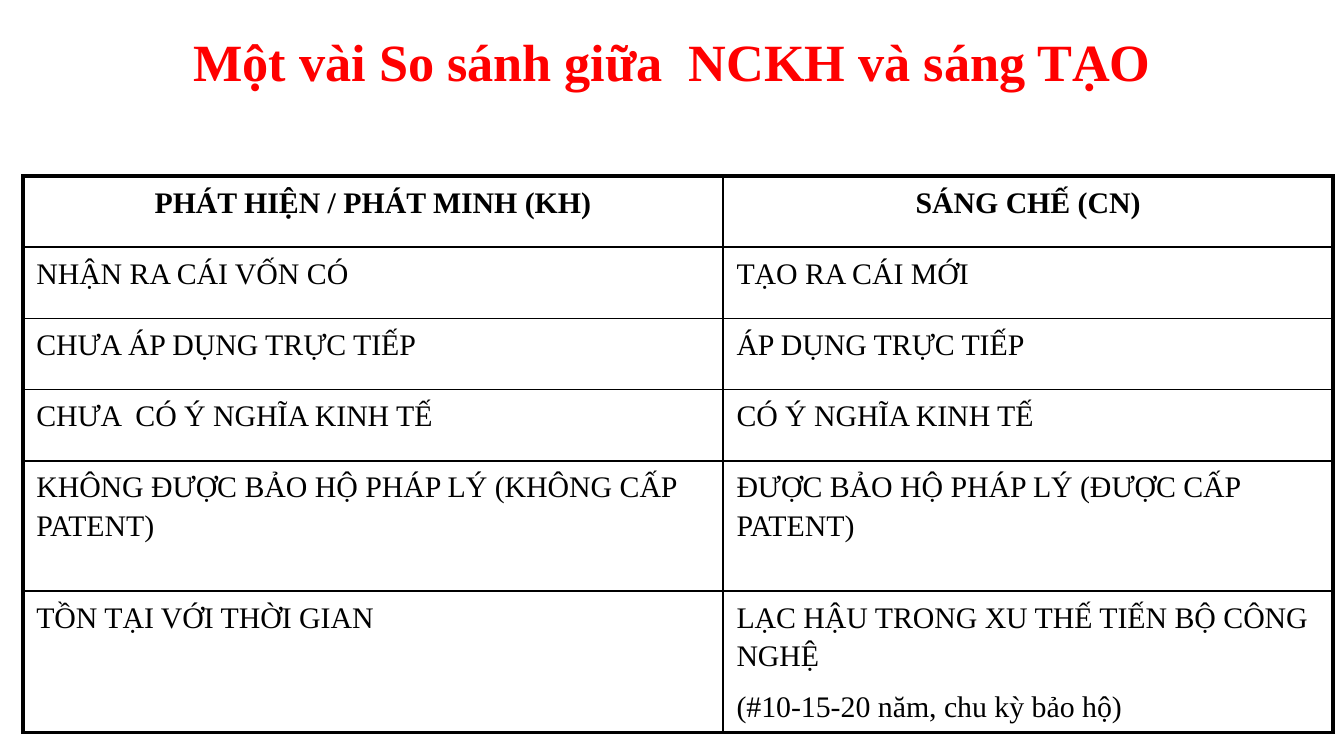
from dataclasses import dataclass

from lxml import etree
from pptx import Presentation, util as u
from pptx.dml.color import RGBColor
from pptx.enum import text
from pptx.oxml import ns

W = 10
H = W * 9 / 16
FONT = "Times New Roman"
COLORS = {"title": "FF0000", "ink": "000000", "paper": "FFFFFF"}
COLUMNS = (5.21, 4.54)
THIN, THICK = 1, 2.25


@dataclass(frozen=True)
class Row:
    discovery: str
    invention: str
    height: float = 0.53
    header: bool = False


ROWS = (
    Row("PHÁT HIỆN / PHÁT MINH (KH)", "SÁNG CHẾ (CN)", header=True),
    Row("NHẬN RA CÁI VỐN CÓ", "TẠO RA CÁI MỚI"),
    Row("CHƯA ÁP DỤNG TRỰC TIẾP", "ÁP DỤNG TRỰC TIẾP"),
    Row("CHƯA  CÓ Ý NGHĨA KINH TẾ", "CÓ Ý NGHĨA KINH TẾ"),
    Row("KHÔNG ĐƯỢC BẢO HỘ PHÁP LÝ (KHÔNG CẤP PATENT)",
        "ĐƯỢC BẢO HỘ PHÁP LÝ (ĐƯỢC CẤP PATENT)", 0.97),
    Row("TỒN TẠI VỚI THỜI GIAN",
        "LẠC HẬU TRONG XU THẾ TIẾN BỘ CÔNG NGHỆ\n(#10-15-20 năm, chu kỳ bảo hộ)", 1.05),
)


def style_font(p, size: float, color: str, bold: bool) -> None:
    f = p.font
    f.name, f.size, f.bold = FONT, u.Pt(size), bold
    f.color.rgb = RGBColor.from_string(COLORS[color])


def add_borders(cell, row: int, col: int) -> None:
    """Draw thick lines on the table's outer edge and thin ones inside."""
    outer = {"L": col == 0, "R": col == len(COLUMNS) - 1,
             "T": row == 0, "B": row == len(ROWS) - 1}
    tc_pr = cell._tc.get_or_add_tcPr()
    for side, is_outer in outer.items():
        width = u.Pt(THICK if is_outer else THIN)
        ln = etree.SubElement(tc_pr, ns.qn(f"a:ln{side}"), w=str(width))
        fill = etree.SubElement(ln, ns.qn("a:solidFill"))
        etree.SubElement(fill, ns.qn("a:srgbClr"), val=COLORS["ink"])


def fill_cell(cell, content: str, header: bool) -> None:
    cell.fill.solid()
    cell.fill.fore_color.rgb = RGBColor.from_string(COLORS["paper"])
    cell.margin_left = cell.margin_right = u.Inches(0.1)
    cell.margin_top = cell.margin_bottom = u.Inches(0.04)
    tf = cell.text_frame
    tf.text = content
    for i, p in enumerate(tf.paragraphs):
        p.alignment = text.PP_ALIGN.CENTER if header else text.PP_ALIGN.LEFT
        p.line_spacing = 1.15
        p.space_before = u.Pt(6.8 if i else 0)
        style_font(p, 16, "ink", header)


def add_title(s, content: str) -> None:
    sp = s.shapes.title
    sp.left, sp.top = u.Inches(0.05 * W), 0
    sp.width, sp.height = u.Inches(0.9 * W), u.Inches(0.16 * H)
    tf = sp.text_frame
    tf.text = content
    tf.vertical_anchor = text.MSO_ANCHOR.MIDDLE
    p = tf.paragraphs[0]
    p.alignment = text.PP_ALIGN.CENTER
    style_font(p, 28, "title", True)


def add_comparison(s) -> None:
    table = s.shapes.add_table(
        len(ROWS), len(COLUMNS), u.Inches(0.17), u.Inches(1.31),
        u.Inches(sum(COLUMNS)), u.Inches(sum(r.height for r in ROWS))).table
    table.first_row = table.horz_banding = False
    for column, width in zip(table.columns, COLUMNS):
        column.width = u.Inches(width)
    for i, row in enumerate(ROWS):
        table.rows[i].height = u.Inches(row.height)
        for j, content in enumerate((row.discovery, row.invention)):
            cell = table.cell(i, j)
            add_borders(cell, i, j)
            fill_cell(cell, content, row.header)


def main() -> None:
    prs = Presentation()
    prs.slide_width, prs.slide_height = u.Inches(W), u.Inches(H)
    s = prs.slides.add_slide(prs.slide_layouts[5])
    add_title(s, "Một vài So sánh giữa  NCKH và sáng TẠO")
    add_comparison(s)
    prs.save("out.pptx")


if __name__ == "__main__":
    main()
